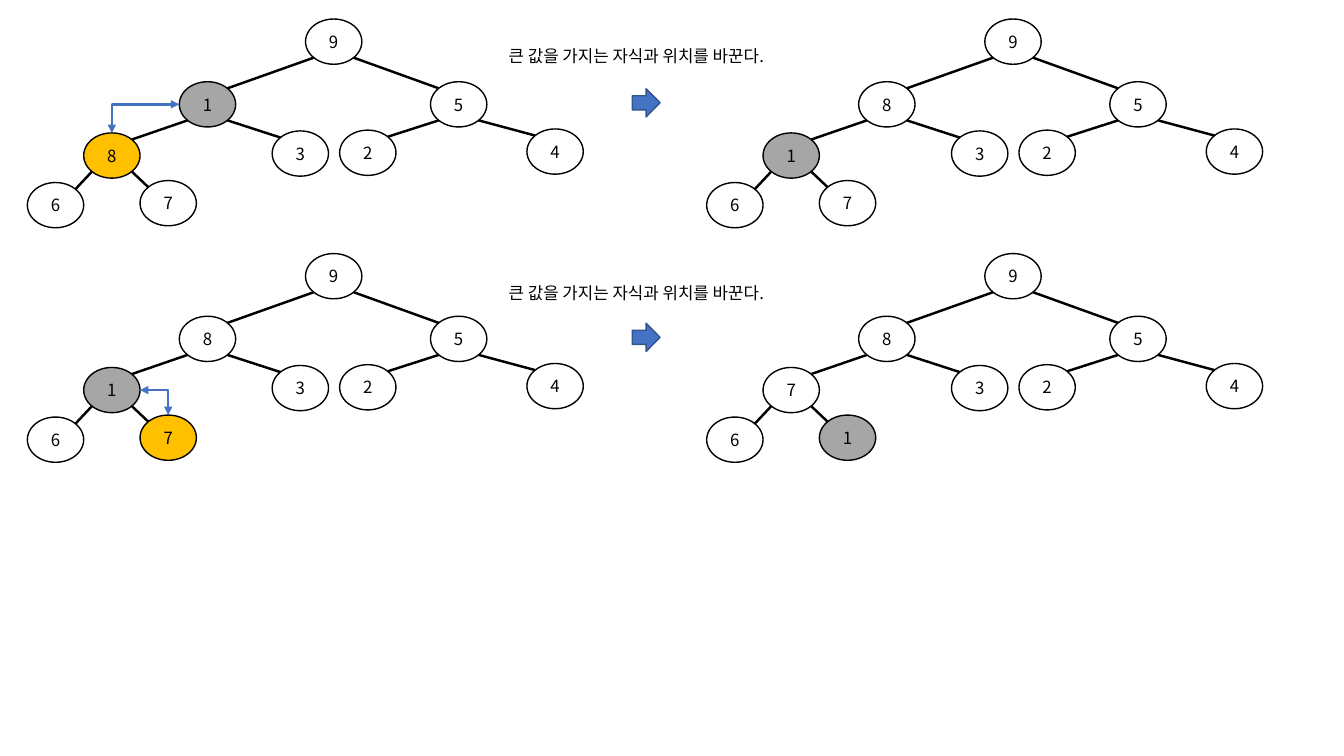
"""Builds a slide showing two sift-down steps on a binary heap."""
from dataclasses import dataclass
from math import sqrt

from lxml.etree import SubElement
from pptx import Presentation
from pptx.dml.color import RGBColor
from pptx.enum.shapes import MSO_CONNECTOR as Link, MSO_SHAPE as Shape
from pptx.enum.text import MSO_ANCHOR, MSO_AUTO_SIZE, PP_ALIGN
from pptx.oxml.ns import qn
from pptx.util import Cm, Pt


@dataclass(frozen=True)
class Theme:
    """Colours, font and sizes of the slide."""
    ink: str = "000000"
    moving: str = "A6A6A6"
    larger: str = "FFC000"
    accent: str = "4472C4"
    accent_edge: str = "325491"
    font: str = "Noto Sans CJK KR"
    text_size: float = 12
    outline: float = 1
    stroke: float = 1.75


NODE_W, NODE_H = 1.42, 1.14
NODE_SPOTS = [(7.7, 0.48), (4.52, 2.06), (10.85, 2.06), (2.11, 3.35), (6.86, 3.3),
              (8.56, 3.28), (13.28, 3.25), (0.69, 4.6), (3.53, 4.55)]
AFTER_SHIFT, STEP_SHIFT = 17.12, 5.91
CAPTION = "큰 값을 가지는 자식과 위치를 바꾼다."


class HeapSlide:
    """Draws heap elements on one slide in one theme."""

    def __init__(self, slide, theme):
        """Keep the slide and its theme."""
        self.slide, self.theme = slide, theme

    def label(self, frame, text):
        """Put one styled paragraph into a text frame."""
        paragraph = frame.paragraphs[0]
        paragraph.text = text
        font = paragraph.font
        font.name, font.size = self.theme.font, Pt(self.theme.text_size)
        font.color.rgb = RGBColor.from_string(self.theme.ink)
        return paragraph

    def outline(self, shape, color):
        """Give a shape its outline and remove its shadow."""
        shape.shadow.inherit = False
        shape.line.color.rgb = RGBColor.from_string(color)
        shape.line.width = Pt(self.theme.outline)

    def node(self, tree, value, x, y, fill):
        """Draw one heap node."""
        circle = tree.shapes.add_shape(Shape.OVAL, Cm(x), Cm(y), Cm(NODE_W), Cm(NODE_H))
        self.outline(circle, self.theme.ink)
        if fill:
            circle.fill.solid()
            circle.fill.fore_color.rgb = RGBColor.from_string(fill)
        else:
            circle.fill.background()
        circle.text_frame.vertical_anchor = MSO_ANCHOR.MIDDLE
        self.label(circle.text_frame, str(value)).alignment = PP_ALIGN.CENTER

    def link(self, shapes, kind, start, end, color):
        """Draw a connector between two points."""
        connector = shapes.add_connector(kind, *map(Cm, start + end))
        connector.line.color.rgb = RGBColor.from_string(color)
        connector.line.width = Pt(self.theme.stroke)
        SubElement(connector.element.spPr, qn("a:effectLst"))
        return connector

    def tree(self, values, left, top, fills):
        """Draw a heap given in level order, with fills by position."""
        group = self.slide.shapes.add_group_shape()
        spots = [(left + x, top + y) for x, y in NODE_SPOTS]
        for position, (value, (x, y)) in enumerate(zip(values, spots)):
            self.node(group, value, x, y, fills.get(position))
        reach_x, reach_y = NODE_W / sqrt(8), NODE_H / sqrt(8)
        centres = [(x + NODE_W / 2, y + NODE_H / 2) for x, y in spots]
        for position, (x, y) in enumerate(centres[1:], start=1):
            parent_x, parent_y = centres[(position - 1) // 2]
            side = -1 if position % 2 else 1
            self.link(group.shapes, Link.STRAIGHT,
                      (parent_x + side * reach_x, parent_y + reach_y),
                      (x - side * reach_x, y - reach_y), self.theme.ink)

    def swap(self, parent, child, top):
        """Draw the two-headed elbow between a parent and its child."""
        (parent_x, parent_y), (child_x, child_y) = NODE_SPOTS[parent], NODE_SPOTS[child]
        side = NODE_W if child_x > parent_x else 0
        elbow = self.link(self.slide.shapes, Link.ELBOW,
                          (parent_x + side, top + parent_y + NODE_H / 2),
                          (child_x + NODE_W / 2, top + child_y), self.theme.accent)
        elbow.element.spPr.find(qn("a:prstGeom")).set("prst", "bentConnector2")
        line = elbow.element.spPr.find(qn("a:ln"))
        for end in ("a:headEnd", "a:tailEnd"):
            SubElement(line, qn(end), type="triangle")

    def arrow(self, x, y):
        """Draw the block arrow from before to after."""
        block = self.slide.shapes.add_shape(Shape.DOWN_ARROW, Cm(x), Cm(y), Cm(0.71), Cm(0.7))
        block.rotation = 270
        block.fill.solid()
        block.fill.fore_color.rgb = RGBColor.from_string(self.theme.accent)
        self.outline(block, self.theme.accent_edge)

    def caption(self, text, x, y):
        """Place the explanation above the arrow."""
        box = self.slide.shapes.add_textbox(Cm(x), Cm(y), Cm(7.77), Cm(0.77))
        box.text_frame.word_wrap = False
        box.text_frame.auto_size = MSO_AUTO_SIZE.SHAPE_TO_FIT_TEXT
        self.label(box.text_frame, text)


def main():
    """Build and save the slide."""
    deck = Presentation()
    deck.slide_width, deck.slide_height = Cm(33.87), Cm(19.05)
    theme = Theme()
    heap = HeapSlide(deck.slides.add_slide(deck.slide_layouts[6]), theme)
    values = [9, 1, 5, 8, 3, 2, 4, 6, 7]
    swaps = [(1, 3, 1.02), (3, 8, 7.01)]
    for step, (parent, child, caption_top) in enumerate(swaps):
        top = step * STEP_SHIFT
        heap.tree(values, 0, top, {parent: theme.moving, child: theme.larger})
        values[parent], values[child] = values[child], values[parent]
        heap.tree(values, AFTER_SHIFT, top, {child: theme.moving})
        heap.swap(parent, child, top)
        heap.arrow(15.93, top + 2.24)
        heap.caption(CAPTION, 12.57, caption_top)
    deck.save("out.pptx")


if __name__ == "__main__":
    main()
